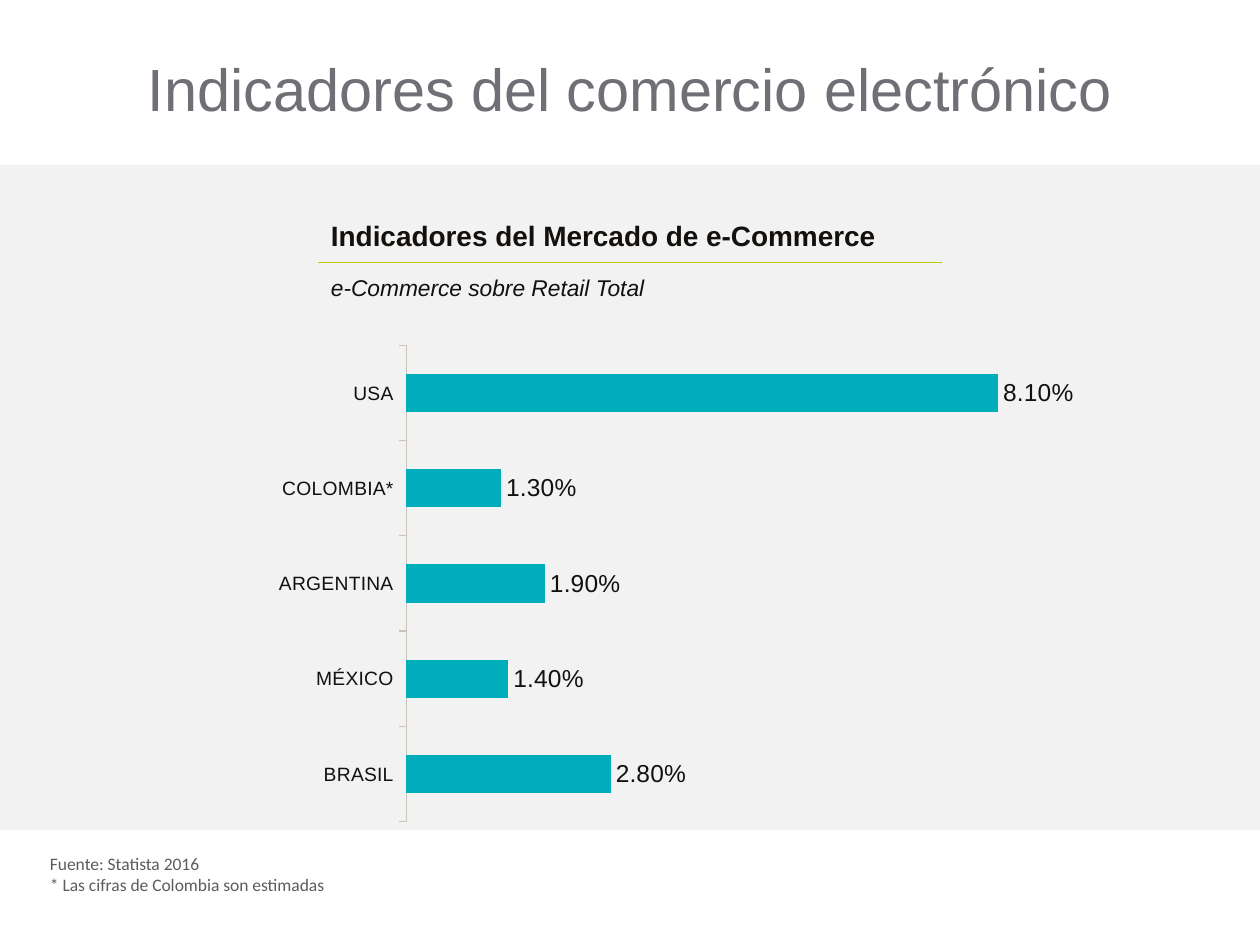
from dataclasses import dataclass

from lxml import etree
from pptx import Presentation
from pptx import util as u
from pptx.chart.data import CategoryChartData
from pptx.dml.color import RGBColor
from pptx.enum import chart as charts
from pptx.enum import shapes, text
from pptx.oxml import parse_xml
from pptx.oxml.ns import nsdecls, qn

PX = 914400 / 126
INK, GREY, TEAL, LIME = "13100D", "6E7075", "00ADBA", "BCCF00"
NOTE_GREY, BAND_GREY, AXIS_GREY = "5C5C5C", "F2F2F2", "CEC3B8"
SHARES = {"BRASIL": 0.028, "MÉXICO": 0.014, "ARGENTINA": 0.019,
          "COLOMBIA*": 0.013, "USA": 0.081}
PLOT_LAYOUT = {"x": 0.263, "y": 0.05, "w": 0.686, "h": 0.81}


@dataclass
class Box:
    left: int
    top: int
    width: int
    height: int

    def emu(self) -> list[u.Emu]:
        return [px(n) for n in (self.left, self.top, self.width, self.height)]


@dataclass
class Style:
    size: int
    color: str
    font: str = "Arial"
    bold: bool = False
    italic: bool = False


@dataclass
class Label:
    box: Box
    lines: list[str]
    style: Style
    anchor: text.MSO_ANCHOR = text.MSO_ANCHOR.TOP
    margins: tuple[int, int] = (13, 6)


LABELS = [
    Label(Box(318, 213, 624, 49), ["Indicadores del Mercado de e-Commerce"],
          Style(16, INK, bold=True)),
    Label(Box(318, 268, 630, 40), ["e-Commerce sobre Retail Total"],
          Style(13, INK, italic=True)),
    Label(Box(50, 850, 1123, 48),
          ["Fuente: Statista 2016", "* Las cifras de Colombia son estimadas"],
          Style(10, NOTE_GREY, "Calibri"), text.MSO_ANCHOR.BOTTOM, (0, 3)),
]


def px(length: int) -> u.Emu:
    return u.Emu(round(length * PX))


def rgb(color: str) -> RGBColor:
    return RGBColor.from_string(color)


def style_font(font, style: Style) -> None:
    font.name, font.size = style.font, u.Pt(style.size)
    font.bold, font.italic = style.bold, style.italic
    font.color.rgb = rgb(style.color)


def add_title(slide, box: Box, title: str) -> None:
    shape = slide.shapes.title
    shape.left, shape.top, shape.width, shape.height = box.emu()
    frame = shape.text_frame
    frame.auto_size = text.MSO_AUTO_SIZE.NONE
    frame.vertical_anchor = text.MSO_ANCHOR.MIDDLE
    paragraph = frame.paragraphs[0]
    paragraph.alignment = text.PP_ALIGN.CENTER
    paragraph.line_spacing = 0.9
    run = paragraph.add_run()
    run.text = title
    style_font(run.font, Style(34, GREY))


def add_band(slide, box: Box) -> None:
    shape = slide.shapes.add_shape(shapes.MSO_SHAPE.RECTANGLE, *box.emu())
    shape.shadow.inherit = False
    shape.fill.solid()
    shape.fill.fore_color.rgb = rgb(BAND_GREY)
    shape.line.fill.background()


def add_label(slide, label: Label) -> None:
    frame = slide.shapes.add_textbox(*label.box.emu()).text_frame
    frame.word_wrap = True
    frame.vertical_anchor = label.anchor
    side, end = label.margins
    frame.margin_left = frame.margin_right = px(side)
    frame.margin_top = frame.margin_bottom = px(end)
    for index, line in enumerate(label.lines):
        paragraph = frame.add_paragraph() if index else frame.paragraphs[0]
        run = paragraph.add_run()
        run.text = line
        style_font(run.font, label.style)


def add_rule(slide, left: int, right: int, y: int) -> None:
    rule = slide.shapes.add_connector(
        shapes.MSO_CONNECTOR.STRAIGHT, px(left), px(y), px(right), px(y))
    rule.line.color.rgb = rgb(LIME)
    rule.line.width = u.Pt(0.5)
    etree.SubElement(rule.element.spPr, qn("a:effectLst"))


def set_plot_layout(chart) -> None:
    """Fix the inner plot area as fractions of the chart."""
    plot_area = chart.element.find(".//" + qn("c:plotArea"))
    for layout in plot_area.findall(qn("c:layout")):
        plot_area.remove(layout)
    sizes = "".join(f'<c:{key} val="{value}"/>' for key, value in PLOT_LAYOUT.items())
    plot_area.insert(0, parse_xml(
        f'<c:layout {nsdecls("c")}><c:manualLayout><c:layoutTarget val="inner"/>'
        f'<c:xMode val="edge"/><c:yMode val="edge"/>{sizes}'
        '</c:manualLayout></c:layout>'))


def add_share_chart(slide, box: Box) -> None:
    data = CategoryChartData(number_format="0.00%")
    data.categories = list(SHARES)
    data.add_series("Series 1", list(SHARES.values()))
    chart = slide.shapes.add_chart(
        charts.XL_CHART_TYPE.BAR_CLUSTERED, *box.emu(), data).chart
    style_font(chart.font, Style(16, INK))
    chart.has_legend = False
    chart.has_title = False
    set_plot_layout(chart)

    values = chart.value_axis
    values.minimum_scale, values.maximum_scale = 0, 0.09
    values.has_major_gridlines = False
    values.visible = False

    countries = chart.category_axis
    countries.major_tick_mark = charts.XL_TICK_MARK.OUTSIDE
    countries.format.line.color.rgb = rgb(AXIS_GREY)
    countries.format.line.width = u.Pt(0.75)
    style_font(countries.tick_labels.font, Style(11, INK))

    plot = chart.plots[0]
    plot.gap_width = 150
    plot.vary_by_categories = False
    series = plot.series[0]
    series.format.fill.solid()
    series.format.fill.fore_color.rgb = rgb(TEAL)
    labels = series.data_labels
    labels.show_value = True
    labels.number_format = "0.00%"
    labels.number_format_is_linked = False
    labels.position = charts.XL_LABEL_POSITION.OUTSIDE_END
    style_font(labels.font, Style(14, INK))


def main() -> None:
    presentation = Presentation()
    presentation.slide_width, presentation.slide_height = px(1260), px(945)
    slide = presentation.slides.add_slide(presentation.slide_layouts[5])
    add_title(slide, Box(0, 48, 1260, 89), "Indicadores del comercio electrónico")
    add_band(slide, Box(0, 165, 1260, 665))
    add_rule(slide, 318, 942, 262)
    add_share_chart(slide, Box(154, 316, 959, 588))
    for label in LABELS:
        add_label(slide, label)
    presentation.save("out.pptx")


if __name__ == "__main__":
    main()
